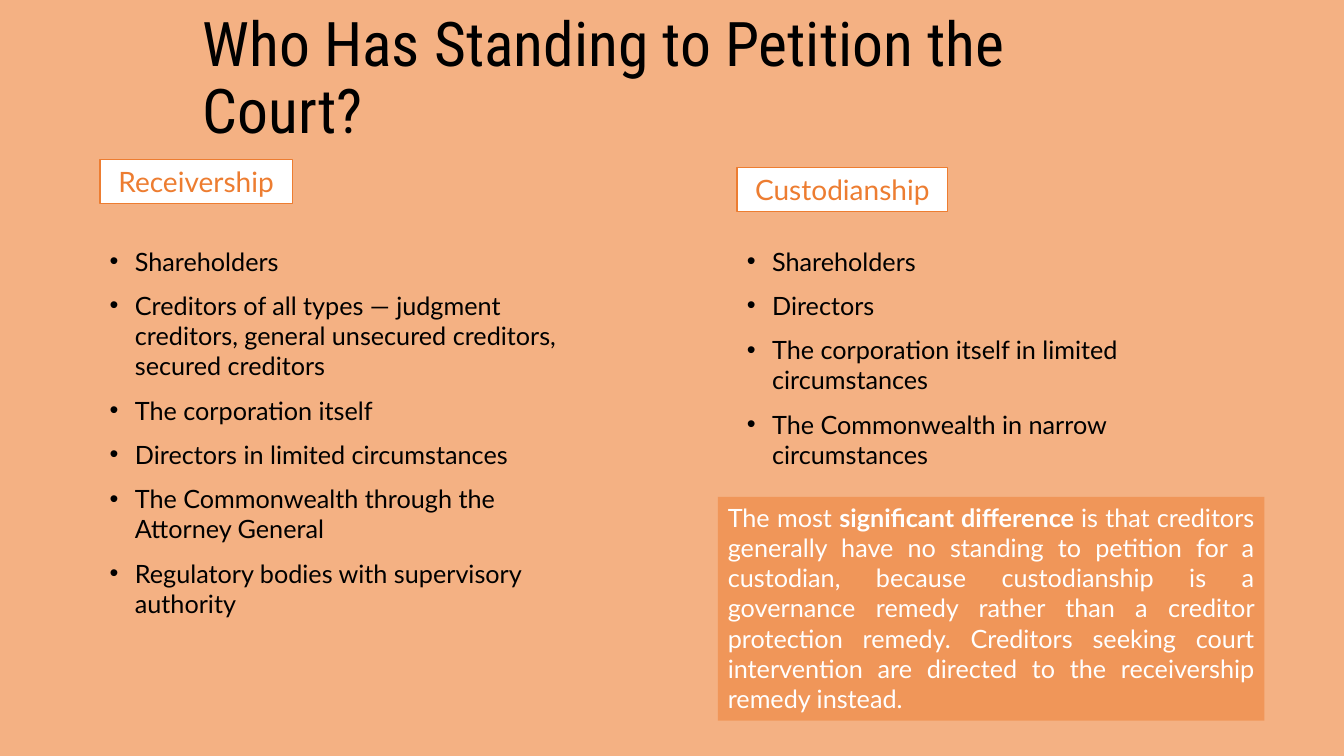
import pptx
import pptx.dml.color
import pptx.enum.shapes
import pptx.enum.text
import pptx.oxml.ns
import pptx.util
from lxml import etree
from pptx.util import Inches

ALIGN = pptx.enum.text.PP_ALIGN
ANCHOR = pptx.enum.text.MSO_ANCHOR
ORANGE, PEACH, WHITE, BLACK = "ED7D31", "F4B183", "FFFFFF", "000000"
LEFT_COLUMN, RIGHT_COLUMN = 0.99, 7.31

RECEIVERSHIP = [
    "Shareholders",
    "Creditors of all types — judgment creditors, general unsecured creditors, secured creditors",
    "The corporation itself",
    "Directors in limited circumstances",
    "The Commonwealth through the Attorney General",
    "Regulatory bodies with supervisory authority",
]
CUSTODIANSHIP = [
    "Shareholders",
    "Directors",
    "The corporation itself in limited circumstances",
    "The Commonwealth in narrow circumstances",
]
DIFFERENCE = [
    ("The most ", False),
    ("significant difference ", True),
    ("is that creditors generally have no standing to petition for a custodian, "
     "because custodianship is a governance remedy rather than a creditor protection "
     "remedy. Creditors seeking court intervention are directed to the receivership "
     "remedy instead.", False),
]


def color(value):
    """Turn a hex string into a colour."""
    return pptx.dml.color.RGBColor.from_string(value)


def add_text(para, text, size=18, font="Lato", fill=BLACK, bold=False):
    """Add a formatted run to a paragraph."""
    span = para.add_run()
    span.text = text
    span.font.size = pptx.util.Pt(size)
    span.font.name = font
    span.font.bold = bold
    span.font.color.rgb = color(fill)


def add_bullet(para):
    """Give a paragraph a hanging round bullet."""
    properties = para._p.get_or_add_pPr()
    properties.set("marL", str(Inches(0.25)))
    properties.set("indent", str(-Inches(0.25)))
    for tag, name, value in (("a:buFont", "typeface", "Arial"), ("a:buChar", "char", "•")):
        etree.SubElement(properties, pptx.oxml.ns.qn(tag)).set(name, value)


def add_title(page, text):
    """Move and fill the title placeholder."""
    title = page.shapes.title
    title.left, title.top = Inches(1.91), Inches(0.07)
    title.width, title.height = Inches(9.51), Inches(1.45)
    frame = title.text_frame
    frame.word_wrap = True
    frame.auto_size = pptx.enum.text.MSO_AUTO_SIZE.NONE
    frame.vertical_anchor = ANCHOR.MIDDLE
    para = frame.paragraphs[0]
    para.alignment = ALIGN.LEFT
    para.line_spacing = 0.9
    add_text(para, text, size=44, font="Roboto Condensed")


def add_list(page, left, height, items):
    """Add a bulleted list in one column."""
    box = page.shapes.add_textbox(Inches(left), Inches(2.39), Inches(5.03), Inches(height))
    frame = box.text_frame
    frame.word_wrap = True
    for index, item in enumerate(items):
        para = frame.add_paragraph() if index else frame.paragraphs[0]
        add_bullet(para)
        if index:
            para.space_before = pptx.util.Pt(10)
        add_text(para, item)


def add_panel(page, left, top, width, height, fill, alignment):
    """Add a filled rectangle and return it with its paragraph."""
    panel = page.shapes.add_shape(
        pptx.enum.shapes.MSO_SHAPE.RECTANGLE,
        Inches(left), Inches(top), Inches(width), Inches(height))
    panel.shadow.inherit = False
    panel.fill.solid()
    panel.fill.fore_color.rgb = color(fill)
    panel.line.fill.background()
    panel.text_frame.word_wrap = True
    panel.text_frame.vertical_anchor = ANCHOR.TOP
    para = panel.text_frame.paragraphs[0]
    para.alignment = alignment
    return panel, para


def add_label(page, left, top, width, text):
    """Add an outlined column heading."""
    label, para = add_panel(page, left, top, width, 0.44, WHITE, ALIGN.CENTER)
    label.line.color.rgb = color(ORANGE)
    label.line.width = pptx.util.Pt(1)
    add_text(para, text, size=20, fill=ORANGE)


def add_callout(page, spans):
    """Add the half-transparent callout with justified text."""
    callout, para = add_panel(page, 7.12, 4.93, 5.42, 2.22, ORANGE, ALIGN.JUSTIFY)
    tone = callout.fill._xPr.find(".//" + pptx.oxml.ns.qn("a:srgbClr"))
    etree.SubElement(tone, pptx.oxml.ns.qn("a:alpha")).set("val", "50000")
    for text, bold in spans:
        add_text(para, text, fill=WHITE, bold=bold)


def main():
    """Build the slide and save it."""
    deck = pptx.Presentation()
    deck.slide_width, deck.slide_height = Inches(13.33), Inches(7.5)
    page = deck.slides.add_slide(deck.slide_layouts.get_by_name("Title Only"))
    page.background.fill.solid()
    page.background.fill.fore_color.rgb = color(PEACH)
    add_title(page, "Who Has Standing to Petition the Court?")
    add_list(page, LEFT_COLUMN, 4.76, RECEIVERSHIP)
    add_list(page, RIGHT_COLUMN, 2.68, CUSTODIANSHIP)
    add_callout(page, DIFFERENCE)
    add_label(page, LEFT_COLUMN, 1.58, 1.91, "Receivership")
    add_label(page, RIGHT_COLUMN, 1.66, 2.09, "Custodianship")
    deck.save("out.pptx")


if __name__ == "__main__":
    main()
